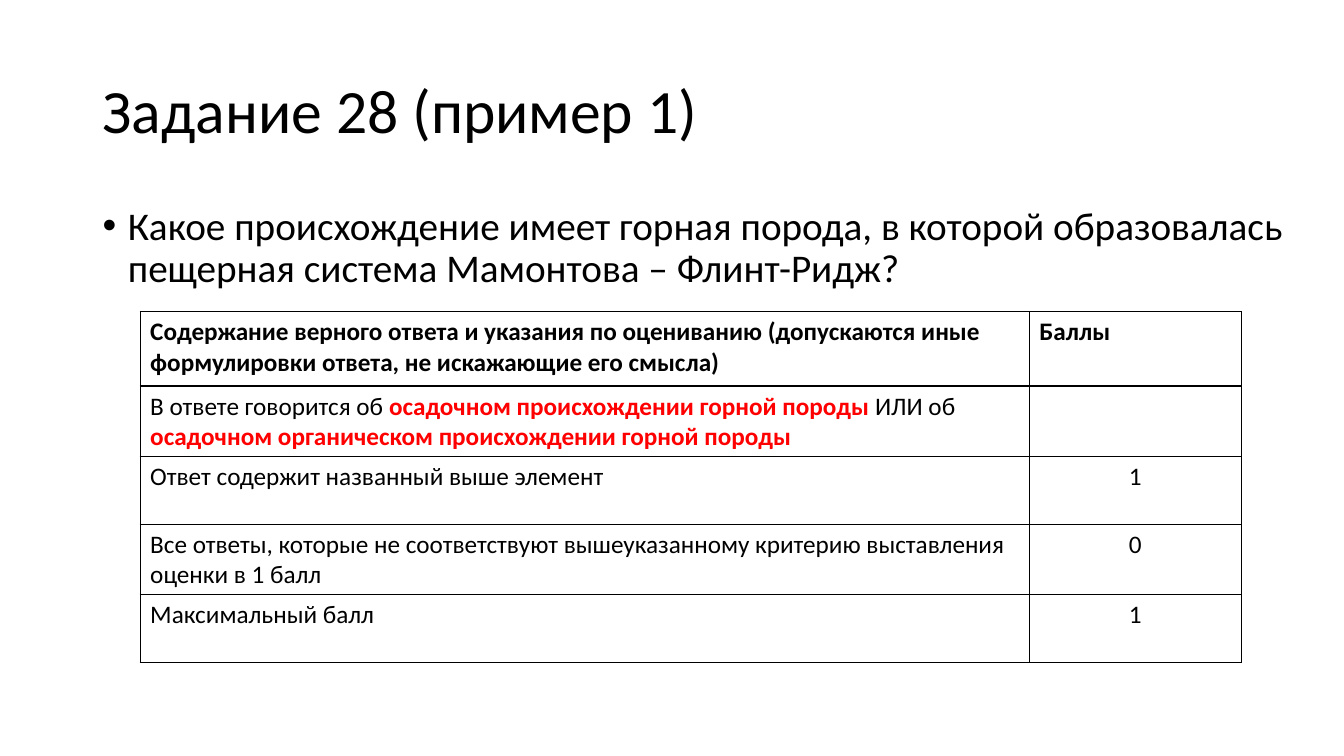
"""Build the slide with the question and the scoring table for task 28."""
from dataclasses import dataclass

from lxml import etree
from pptx import Presentation, util as u
from pptx.dml.color import RGBColor
from pptx.enum import text
from pptx.oxml import ns

TITLE = "Задание 28 (пример 1)"
QUESTION = ("Какое происхождение имеет горная порода, в которой образовалась "
            "пещерная система Мамонтова – Флинт-Ридж?")
HEADER = ("Содержание верного ответа и указания по оцениванию (допускаются иные "
          "формулировки ответа, не искажающие его смысла)", "Баллы")
ANSWER = (("В ответе говорится об ", False),
          ("осадочном происхождении горной породы ", True),
          ("ИЛИ об ", False),
          ("осадочном органическом происхождении горной породы", True))
SCORES = (("Ответ содержит названный выше элемент", "1"),
          ("Все ответы, которые не соответствуют вышеуказанному критерию "
           "выставления оценки в 1 балл", "0"),
          ("Максимальный балл", "1"))
ROWS = (HEADER, (ANSWER, ""), *SCORES)

SLIDE = (13.33, 7.5)
TITLE_BOX = (0.92, 0.4, 11.5, 1.45)
QUESTION_BOX = (0.92, 2, 11.99, 1)
TABLE_AT = (1.39, 3.09)
COLUMNS = (8.82, 2.1)
HEADER_HEIGHT, ROW_HEIGHT = 0.74, 0.67


@dataclass(frozen=True)
class Theme:
    """Hold the font, colours and type sizes."""
    font: str = "Calibri"
    ink: str = "000000"
    accent: str = "FF0000"
    title: int = 44
    question: int = 28
    table: int = 18
    border: int = 1
    spacing: float = 0.9


THEME = Theme()


def style(font, size, color=THEME.ink, bold=False):
    """Apply the theme font with a size, colour and weight."""
    font.name, font.size, font.bold = THEME.font, u.Pt(size), bold
    font.color.rgb = RGBColor.from_string(color)


def add_title(page):
    """Place and format the title."""
    box = page.shapes.title
    box.left, box.top, box.width, box.height = map(u.Inches, TITLE_BOX)
    box.text_frame.text = TITLE
    box.text_frame.vertical_anchor = text.MSO_ANCHOR.MIDDLE
    para = box.text_frame.paragraphs[0]
    para.alignment, para.line_spacing = text.PP_ALIGN.LEFT, THEME.spacing
    style(para.font, THEME.title)


def add_question(page):
    """Write the bulleted question."""
    frame = page.shapes.add_textbox(*map(u.Inches, QUESTION_BOX)).text_frame
    frame.word_wrap = True
    para = frame.paragraphs[0]
    para.text = QUESTION
    para.line_spacing, para.space_before = THEME.spacing, u.Pt(10)
    style(para.font, THEME.question)
    props = para._p.get_or_add_pPr()
    props.set("marL", str(u.Inches(0.25)))
    props.set("indent", str(u.Inches(-0.25)))
    bullet_font = etree.Element(ns.qn("a:buFont"), typeface="Arial")
    bullet = etree.Element(ns.qn("a:buChar"), char="•")
    anchor = props.find(ns.qn("a:defRPr"))
    for part in (bullet_font, bullet):
        anchor.addprevious(part)


def add_borders(cell):
    """Draw a thin line on each side of a cell."""
    props = cell._tc.get_or_add_tcPr()
    for side in ("lnL", "lnR", "lnT", "lnB"):
        line = etree.SubElement(props, ns.qn(f"a:{side}"), w=str(u.Pt(THEME.border)))
        fill = etree.SubElement(line, ns.qn("a:solidFill"))
        etree.SubElement(fill, ns.qn("a:srgbClr"), val=THEME.ink)


def fill_cell(cell, content, header, centred):
    """Write one cell, with marked spans in bold accent colour."""
    add_borders(cell)
    cell.fill.background()
    para = cell.text_frame.paragraphs[0]
    para.alignment = text.PP_ALIGN.CENTER if centred else text.PP_ALIGN.LEFT
    style(para.font, THEME.table, bold=header)
    spans = ((content, False),) if isinstance(content, str) else content
    for words, marked in spans:
        span = para.add_run()
        span.text = words
        style(span.font, THEME.table, THEME.accent if marked else THEME.ink,
              header or marked)


def add_scores(page):
    """Build the scoring table."""
    heights = [HEADER_HEIGHT] + [ROW_HEIGHT] * (len(ROWS) - 1)
    area = (*TABLE_AT, sum(COLUMNS), sum(heights))
    table = page.shapes.add_table(len(ROWS), len(COLUMNS), *map(u.Inches, area)).table
    table.first_row = table.horz_banding = False
    for column, width in zip(table.columns, COLUMNS):
        column.width = u.Inches(width)
    for r, (row, height) in enumerate(zip(ROWS, heights)):
        table.rows[r].height = u.Inches(height)
        for c, content in enumerate(row):
            fill_cell(table.cell(r, c), content, r == 0, r > 0 and c == 1)


def main():
    """Assemble and save the deck."""
    deck = Presentation()
    deck.slide_width, deck.slide_height = map(u.Inches, SLIDE)
    page = deck.slides.add_slide(deck.slide_layouts[5])
    add_title(page)
    add_question(page)
    add_scores(page)
    deck.save("out.pptx")


if __name__ == "__main__":
    main()
